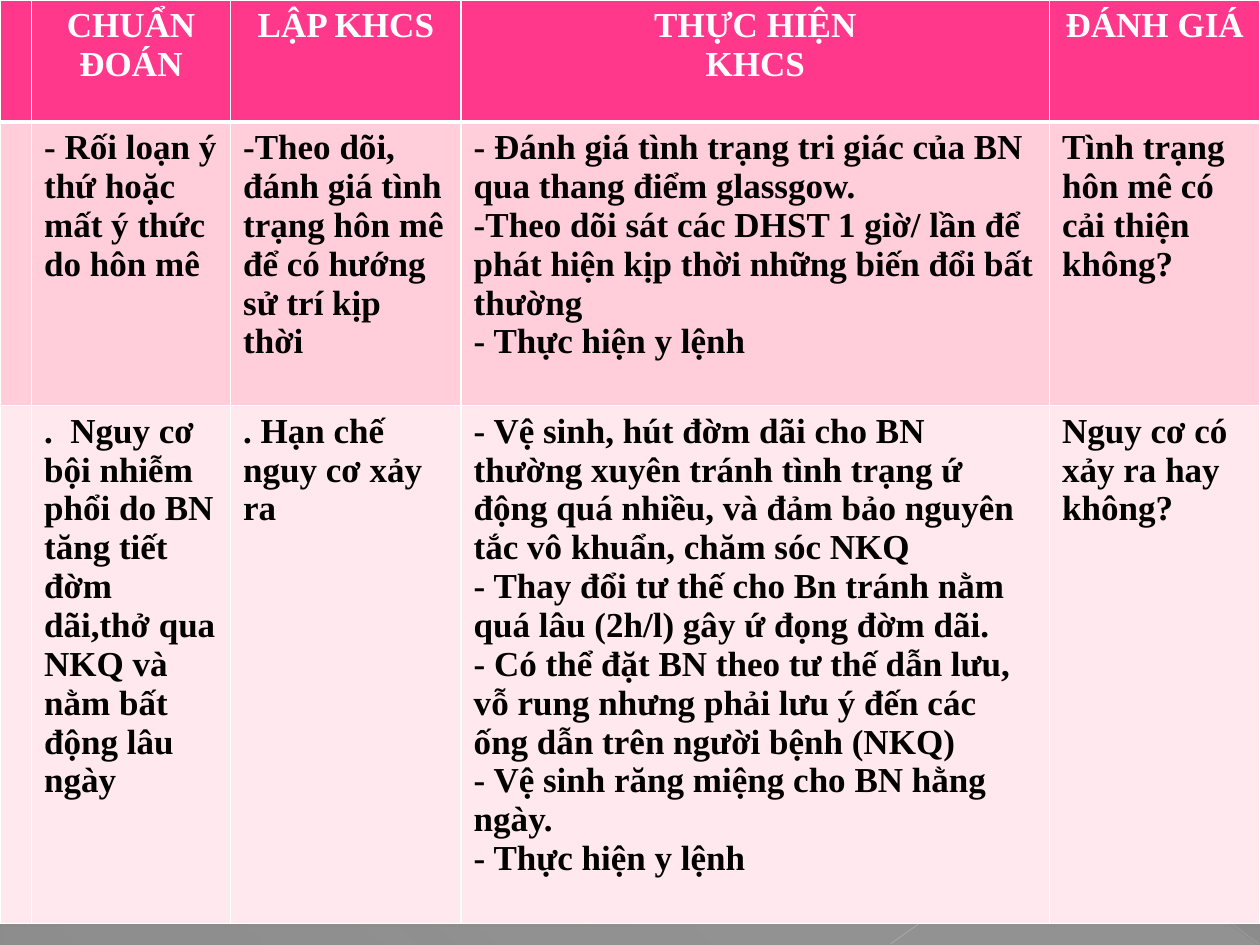
import pptx
import pptx.util
import pptx.dml.color
import pptx.enum.shapes
import pptx.enum.text
import pptx.oxml.ns
from lxml import etree

RGB = pptx.dml.color.RGBColor
Inches = pptx.util.Inches
Pt = pptx.util.Pt
qn = pptx.oxml.ns.qn

WIDTH, HEIGHT = 10, 7.5
WHITE, BLACK = RGB(0xFF, 0xFF, 0xFF), RGB(0, 0, 0)
PINK = RGB(0xFF, 0x38, 0x8C)
ROSE = RGB(0xFF, 0xCE, 0xDA)
BLUSH = RGB(0xFF, 0xE8, 0xEE)
DARK, MID, GREY = RGB(0x4A, 0x4A, 0x4A), RGB(0x62, 0x62, 0x62), RGB(0x8C, 0x8C, 0x8C)
SILVER = RGB(0xD2, 0xD2, 0xD2)
LINE_A, LINE_B = RGB(0xBF, 0xBF, 0xBF), RGB(0xC6, 0xC6, 0xC6)

FONT = {"name": "Times New Roman", "size": Pt(20), "bold": True}
COLS = [0.25, 1.58, 1.83, 4.67, 1.67]
ROWS = [0.97, 2.25, 4.11]
FILLS = [PINK, ROSE, BLUSH]
CONTENT = [
    [[], ["CHUẨN ĐOÁN"], ["LẬP KHCS"], ["THỰC HIỆN", "KHCS"], ["ĐÁNH GIÁ"]],
    [
        [],
        ["- Rối loạn ý thứ hoặc mất ý thức do hôn mê"],
        ["-Theo dõi, đánh giá tình trạng hôn mê để có hướng sử trí kịp thời"],
        ["- Đánh giá tình trạng tri giác của BN qua thang điểm glassgow.",
         "-Theo dõi sát các DHST 1 giờ/ lần để phát hiện kịp thời những biến đổi bất thường",
         "- Thực hiện y lệnh"],
        ["Tình trạng hôn mê có cải thiện không?"],
    ],
    [
        [],
        [".  Nguy cơ bội nhiễm phổi do BN tăng tiết đờm dãi,thở qua NKQ và nằm bất động lâu ngày"],
        [". Hạn chế nguy cơ xảy ra"],
        ["- Vệ sinh, hút đờm dãi cho BN thường xuyên tránh tình trạng ứ động quá nhiều, "
         "và đảm bảo nguyên tắc vô khuẩn, chăm sóc NKQ",
         "- Thay đổi tư thế cho Bn tránh nằm quá lâu (2h/l) gây ứ đọng đờm dãi.",
         "- Có thể đặt BN theo tư thế dẫn lưu, vỗ rung nhưng phải lưu ý đến các "
         "ống dẫn trên người bệnh (NKQ)",
         "- Vệ sinh răng miệng cho BN hằng ngày.",
         "- Thực hiện y lệnh"],
        ["Nguy cơ có xảy ra hay không?"],
    ],
]


def add_color(parent, color, alpha=100):
    """Append a colour with an opacity in percent."""
    clr = etree.SubElement(parent, qn("a:srgbClr"), val=str(color))
    if alpha < 100:
        etree.SubElement(clr, qn("a:alpha"), val=str(alpha * 1000))


def paint_gradient(fill, element, angle, stops):
    """Fill with a clockwise linear gradient of (position, colour, opacity) stops."""
    fill.gradient()
    fill.gradient_angle = 360 - angle
    stop_list = element.find(".//" + qn("a:gsLst"))
    for gs in list(stop_list):
        stop_list.remove(gs)
    for pos, color, alpha in stops:
        add_color(etree.SubElement(stop_list, qn("a:gs"), pos=str(pos * 1000)), color, alpha)


def add_triangle(s):
    """Add the faint triangle over the lower left half."""
    sp = s.shapes.add_shape(pptx.enum.shapes.MSO_SHAPE.RIGHT_TRIANGLE,
                            Inches(0.01), Inches(0.02), Inches(9.98), Inches(7.48))
    sp.shadow.inherit = False
    sp.line.fill.background()
    paint_gradient(sp.fill, sp.element, 133,
                   [(0, SILVER, 10), (70, SILVER, 8), (100, SILVER, 1)])


def add_line(s, start, end, color, width, alpha):
    """Add a translucent straight line."""
    ln = s.shapes.add_connector(pptx.enum.shapes.MSO_CONNECTOR.STRAIGHT,
                                *(Inches(v) for v in start + end))
    ln.line.width = Pt(width)
    ln.line.color.rgb = color
    clr = ln.element.spPr.find(".//" + qn("a:srgbClr"))
    etree.SubElement(clr, qn("a:alpha"), val=str(alpha * 1000))
    etree.SubElement(ln.element.spPr, qn("a:effectLst"))


def set_borders(cell, bottom):
    """Give a cell white borders, the bottom one of its own width."""
    tc_pr = cell.fill and cell._tc.get_or_add_tcPr()
    for i, side in enumerate("LRTB"):
        ln = etree.Element(qn("a:ln" + side), w=str(Pt(bottom if side == "B" else 1)))
        add_color(etree.SubElement(ln, qn("a:solidFill")), WHITE)
        tc_pr.insert(i, ln)


def fill_cell(cell, lines, color, header):
    """Write the paragraphs of a cell and paint it."""
    cell.fill.solid()
    cell.fill.fore_color.rgb = color
    set_borders(cell, 3 if header else 1)
    tf = cell.text_frame
    for i, text in enumerate(lines):
        p = tf.add_paragraph() if i else tf.paragraphs[0]
        if header:
            p.alignment = pptx.enum.text.PP_ALIGN.CENTER
        r = p.add_run()
        r.text = text
        for name, value in FONT.items():
            setattr(r.font, name, value)
        r.font.color.rgb = WHITE if header else BLACK


def add_care_table(s):
    """Add the care plan table."""
    table = s.shapes.add_table(len(ROWS), len(COLS), 0, 0,
                               Inches(sum(COLS)), Inches(sum(ROWS))).table
    for col, width in zip(table.columns, COLS):
        col.width = Inches(width)
    for i, (height, color, row) in enumerate(zip(ROWS, FILLS, CONTENT)):
        table.rows[i].height = Inches(height)
        for j, lines in enumerate(row):
            fill_cell(table.cell(i, j), lines, color, header=i == 0)


def main():
    """Build and save the slide."""
    prs = pptx.Presentation()
    prs.slide_width, prs.slide_height = Inches(WIDTH), Inches(HEIGHT)
    s = prs.slides.add_slide(prs.slide_layouts[6])
    paint_gradient(s.background.fill, s.element, 90,
                   [(0, DARK, 100), (60, MID, 100), (100, GREY, 100)])
    add_triangle(s)
    add_line(s, (0, 0.01), (9.99, 7.49), LINE_A, 0.39, 35)
    add_line(s, (WIDTH, 5.41), (7.07, 7.49), LINE_B, 0.47, 45)
    add_care_table(s)
    prs.save("out.pptx")


if __name__ == "__main__":
    main()
